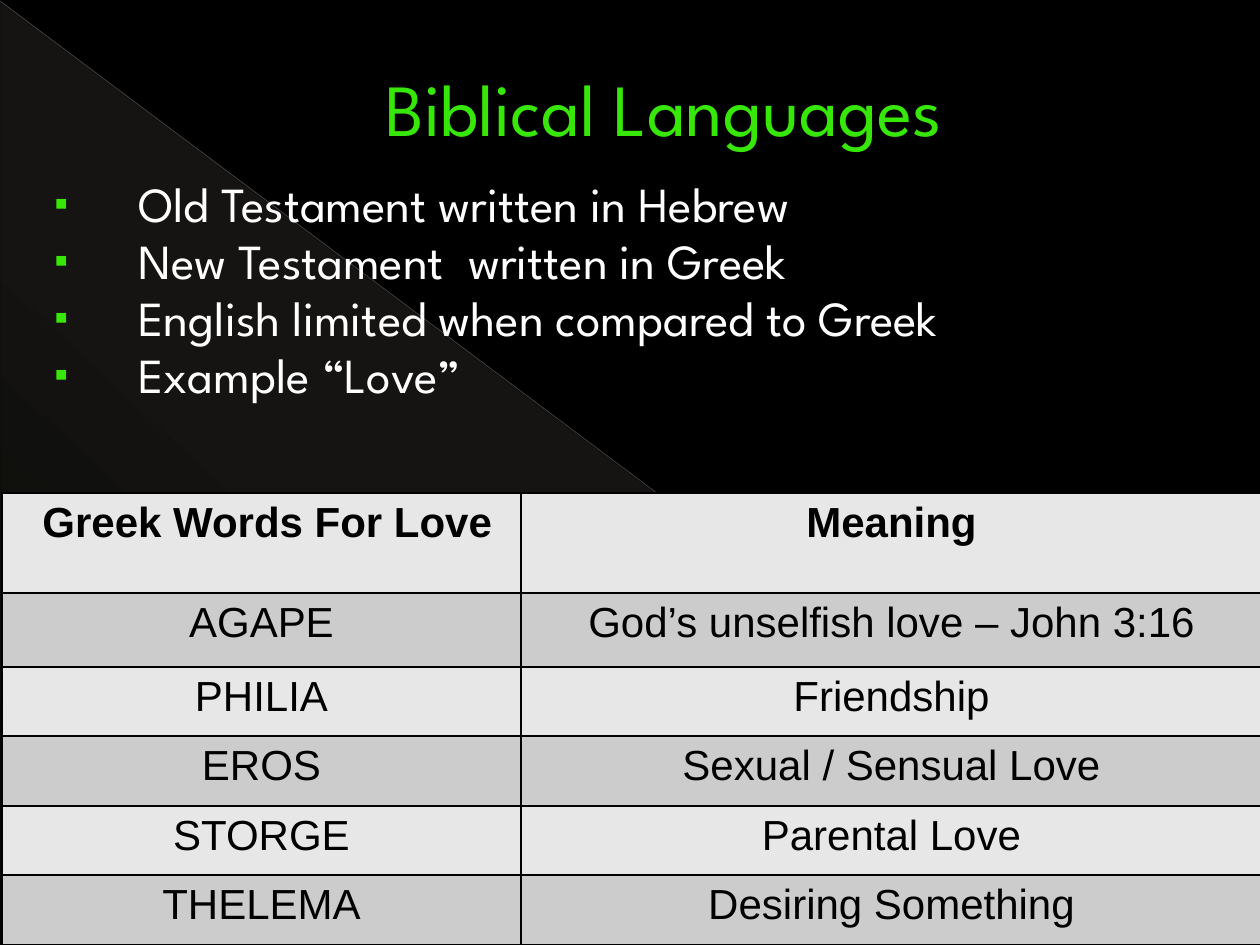
import pptx
import pptx.dml.color
import pptx.enum.shapes
import pptx.enum.text
import pptx.oxml
import pptx.oxml.ns
import pptx.util

PX = 914400 / 126
NS = pptx.oxml.ns.nsdecls("a")
CENTER = pptx.enum.text.PP_ALIGN.CENTER


def px(*lengths):
    return [pptx.util.Emu(round(length * PX)) for length in lengths]


def add_run(paragraph, text, size, font, color, bold=False):
    run = paragraph.add_run()
    run.text = text
    run.font.size = pptx.util.Pt(size)
    run.font.name = font
    run.font.bold = bold
    run.font.color.rgb = pptx.dml.color.RGBColor.from_string(color)


presentation = pptx.Presentation()
presentation.slide_width, presentation.slide_height = px(1260, 945)
slide = presentation.slides.add_slide(presentation.slide_layouts[6])
background = slide.background.fill
background.solid()
background.fore_color.rgb = pptx.dml.color.RGBColor.from_string("000000")

triangle = slide.shapes.add_shape(
    pptx.enum.shapes.MSO_SHAPE.RIGHT_TRIANGLE, *px(1, 2, 1258, 943))
triangle.shadow.inherit = False
triangle.line.fill.background()
stops = "".join(
    f'<a:gs pos="{position * 1000}"><a:srgbClr val="E7DEC9">'
    f'<a:alpha val="{alpha * 1000}"/></a:srgbClr></a:gs>'
    for position, alpha in [(0, 10), (70, 8), (100, 1)])
triangle.element.spPr.find(pptx.oxml.ns.qn("a:prstGeom")).addnext(pptx.oxml.parse_xml(
    f'<a:gradFill {NS}><a:gsLst>{stops}</a:gsLst><a:lin ang="7980000"/></a:gradFill>'))

for ends, color, width, alpha in [
    ((0, 1, 1259, 944), "BFB3B1", 0.39, 35),
    ((1260, 682, 891, 944), "C6BCBA", 0.47, 45),
]:
    line = slide.shapes.add_connector(pptx.enum.shapes.MSO_CONNECTOR.STRAIGHT, *px(*ends))
    line.line.width = pptx.util.Pt(width)
    line.line.color.rgb = pptx.dml.color.RGBColor.from_string(color)
    stroke = line.element.spPr.find(".//" + pptx.oxml.ns.qn("a:srgbClr"))
    stroke.append(pptx.oxml.parse_xml(f'<a:alpha {NS} val="{alpha * 1000}"/>'))
    line.element.spPr.append(pptx.oxml.parse_xml(f"<a:effectLst {NS}/>"))

title = slide.shapes.add_textbox(*px(0, 37, 1260, 141)).text_frame
title.word_wrap = True
title.vertical_anchor = pptx.enum.text.MSO_ANCHOR.MIDDLE
paragraph = title.paragraphs[0]
paragraph.alignment = CENTER
paragraph._p.get_or_add_pPr().set("marL", str(px(67)[0]))
add_run(paragraph, "Biblical Languages", 42, "League Spartan", "37E707")

body = slide.shapes.add_textbox(*px(42, 179, 1187, 701)).text_frame
body.word_wrap = True
indent = px(84)[0]
for index, text in enumerate([
    "Old Testament written in Hebrew",
    "New Testament  written in Greek",
    "English limited when compared to Greek",
    "Example “Love”",
]):
    paragraph = body.add_paragraph() if index else body.paragraphs[0]
    paragraph.line_spacing = 0.8
    paragraph.space_before = pptx.util.Pt(5.6)
    properties = paragraph._p.get_or_add_pPr()
    properties.set("marL", str(indent))
    properties.set("indent", str(-indent))
    for bullet in [
        f'<a:buClr {NS}><a:srgbClr val="37E707"/></a:buClr>',
        f'<a:buSzPct {NS} val="80000"/>',
        f'<a:buFont {NS} typeface="Arial"/>',
        f'<a:buChar {NS} char="▪"/>',
    ]:
        properties.append(pptx.oxml.parse_xml(bullet))
    add_run(paragraph, text, 28, "League Spartan", "FFFFFF")

rows = [
    (" Greek Words For Love", "Meaning"),
    ("AGAPE", "God’s unselfish love – John 3:16"),
    ("PHILIA", "Friendship"),
    ("EROS", "Sexual / Sensual Love"),
    ("STORGE", "Parental Love"),
    ("THELEMA", "Desiring Something"),
]
table = slide.shapes.add_table(len(rows), 2, *px(2, 493, 1260, 452)).table
table.first_row = table.horz_banding = False
for column, width in zip(table.columns, px(519, 741)):
    column.width = width
for row, height in zip(table.rows, px(100, 74, 69, 70, 69, 70)):
    row.height = height
for row_index, row in enumerate(rows):
    for column_index, text in enumerate(row):
        cell = table.cell(row_index, column_index)
        paragraph = cell.text_frame.paragraphs[0]
        paragraph.alignment = CENTER
        add_run(paragraph, text, 24, "Arial", "000000", row_index == 0)
        properties = cell._tc.get_or_add_tcPr()
        for side in ["lnL", "lnR", "lnT", "lnB"]:
            properties.append(pptx.oxml.parse_xml(
                f'<a:{side} {NS} w="12700"><a:solidFill><a:srgbClr val="000000"/>'
                f'</a:solidFill></a:{side}>'))
        cell.fill.solid()
        cell.fill.fore_color.rgb = pptx.dml.color.RGBColor.from_string(
            ["E7E7E7", "CCCCCC"][row_index % 2])

presentation.save("out.pptx")
